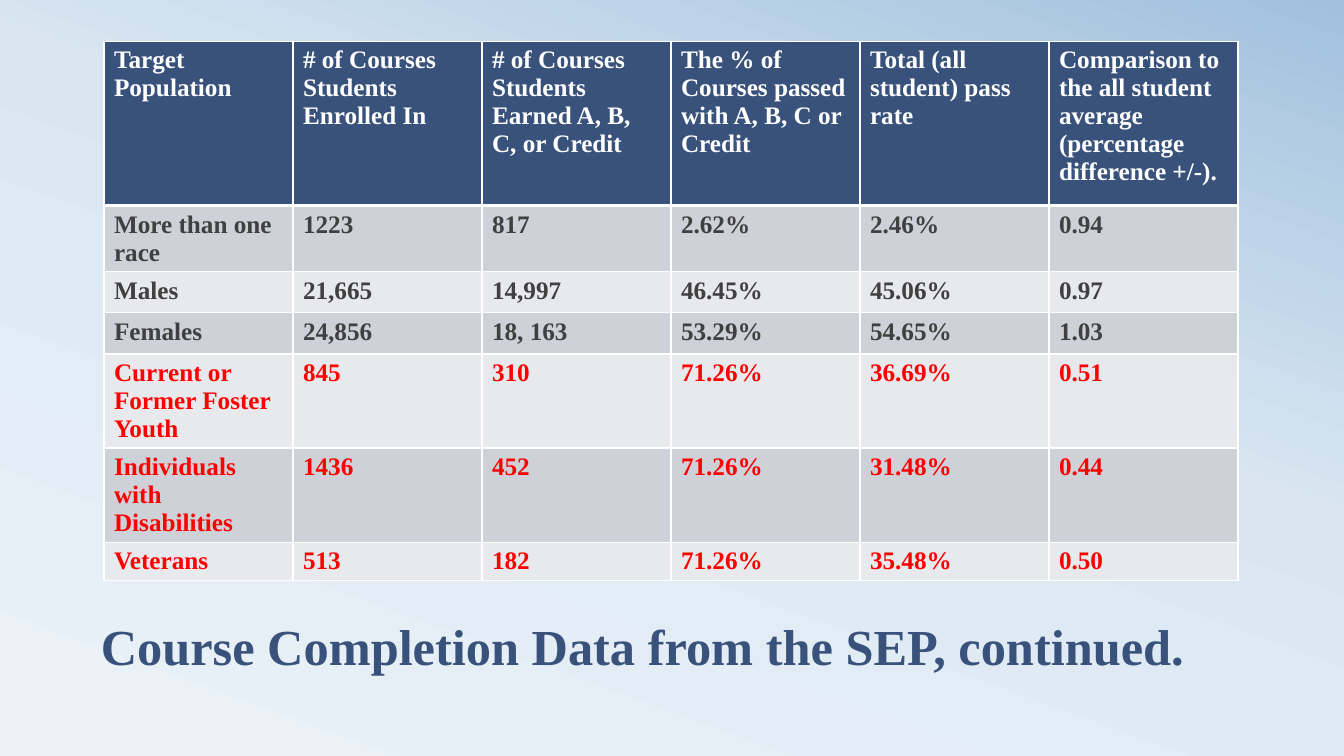
from copy import deepcopy

from pptx import Presentation
from pptx import util as u
from pptx.dml.color import RGBColor
from pptx.enum import text
from pptx.oxml import parse_xml
from pptx.oxml.ns import nsdecls, qn

NAVY = RGBColor(0x39, 0x52, 0x7B)
WHITE = RGBColor(0xFF, 0xFF, 0xFF)
CHARCOAL = RGBColor(0x40, 0x40, 0x40)
RED = RGBColor(0xFF, 0x00, 0x00)
BAND_DARK = RGBColor(0xCE, 0xD1, 0xD7)
BAND_LIGHT = RGBColor(0xE8, 0xE9, 0xEC)
SKY = [
    (0, RGBColor(0xEC, 0xF3, 0xF8)),
    (0.58, RGBColor(0xD9, 0xE6, 0xF2)),
    (1, RGBColor(0xA1, 0xC1, 0xDE)),
]

FONT = "Times New Roman"
TITLE = "Course Completion Data from the SEP, continued."
HEADINGS = (
    "Target Population",
    "# of Courses Students Enrolled In",
    "# of Courses Students Earned A, B, C, or Credit",
    "The % of Courses passed with A, B, C or Credit",
    "Total (all student) pass rate",
    "Comparison to the all student average (percentage difference +/-).",
)
POPULATIONS = [
    ("More than one race", "1223", "817", "2.62%", "2.46%", "0.94"),
    ("Males", "21,665", "14,997", "46.45%", "45.06%", "0.97"),
    ("Females", "24,856", "18, 163", "53.29%", "54.65%", "1.03"),
    ("Current or Former Foster Youth", "845", "310", "71.26%", "36.69%", "0.51"),
    ("Individuals with Disabilities", "1436", "452", "71.26%", "31.48%", "0.44"),
    ("Veterans", "513", "182", "71.26%", "35.48%", "0.50"),
]
FIRST_RED_ROW = 4
ROW_HEIGHTS = [4.14, 1.63, 1.04, 1.04, 2.37, 2.37, 0.96]


def apply_format(target, values):
    for name, value in values.items():
        setattr(target, name, value)


def set_font(paragraph, size, color):
    apply_format(paragraph.font, {"name": FONT, "size": u.Pt(size), "bold": True})
    paragraph.font.color.rgb = color


def paint_background(slide):
    fill = slide.background.fill
    fill.gradient()
    fill.gradient_angle = 70
    stop_list = slide.element.find(".//" + qn("a:gsLst"))
    stop_list.append(deepcopy(stop_list[0]))
    for stop, (position, color) in zip(fill.gradient_stops, SKY):
        stop.position = position
        stop.color.rgb = color


def place_title(slide, left, top, width, height):
    title = slide.shapes.title
    apply_format(title, {"left": left, "top": top, "width": width, "height": height})
    frame = title.text_frame
    frame.text = TITLE
    apply_format(frame, {
        "word_wrap": True,
        "auto_size": text.MSO_AUTO_SIZE.NONE,
        "vertical_anchor": text.MSO_ANCHOR.BOTTOM,
        "margin_right": u.Cm(0.89),
    })
    heading = frame.paragraphs[0]
    apply_format(heading, {"alignment": text.PP_ALIGN.CENTER, "line_spacing": 0.8})
    set_font(heading, 36, NAVY)


def set_borders(cell, points):
    """Draw white cell borders; points maps the sides L, R, T, B to widths."""
    properties = cell._tc.get_or_add_tcPr()
    for index, side in enumerate("LRTB"):
        properties.insert(index, parse_xml(
            f'<a:ln{side} {nsdecls("a")} w="{u.Pt(points[side])}">'
            f'<a:solidFill><a:srgbClr val="{WHITE}"/></a:solidFill></a:ln{side}>'
        ))


def row_style(row):
    """Return the fill colour, font colour and border widths of a table row."""
    borders = dict.fromkeys("LRTB", 1)
    if row == 0:
        return NAVY, WHITE, borders | {"B": 3}
    band = BAND_DARK if row % 2 else BAND_LIGHT
    ink = RED if row >= FIRST_RED_ROW else CHARCOAL
    return band, ink, borders | {"T": 3 if row == 1 else 1}


def place_completion_table(slide, left, top, width):
    records = [HEADINGS, *POPULATIONS]
    height = u.Cm(sum(ROW_HEIGHTS))
    table = slide.shapes.add_table(
        len(records), len(HEADINGS), left, top, width, height).table
    for column in table.columns:
        column.width = width // len(HEADINGS)
    for row, record in enumerate(records):
        table.rows[row].height = u.Cm(ROW_HEIGHTS[row])
        band, ink, borders = row_style(row)
        for column, entry in enumerate(record):
            cell = table.cell(row, column)
            cell.text = entry
            set_font(cell.text_frame.paragraphs[0], 18, ink)
            cell.fill.solid()
            cell.fill.fore_color.rgb = band
            set_borders(cell, borders)


def main():
    deck = Presentation()
    deck.slide_width, deck.slide_height = u.Cm(33.87), u.Cm(19.05)
    slide = deck.slides.add_slide(deck.slide_layouts[5])
    paint_background(slide)
    place_title(slide, u.Cm(1.27), u.Cm(14.17), u.Cm(30.48), u.Cm(2.97))
    place_completion_table(slide, u.Cm(2.62), u.Cm(1.04), u.Cm(28.58))
    deck.save("out.pptx")


if __name__ == "__main__":
    main()
